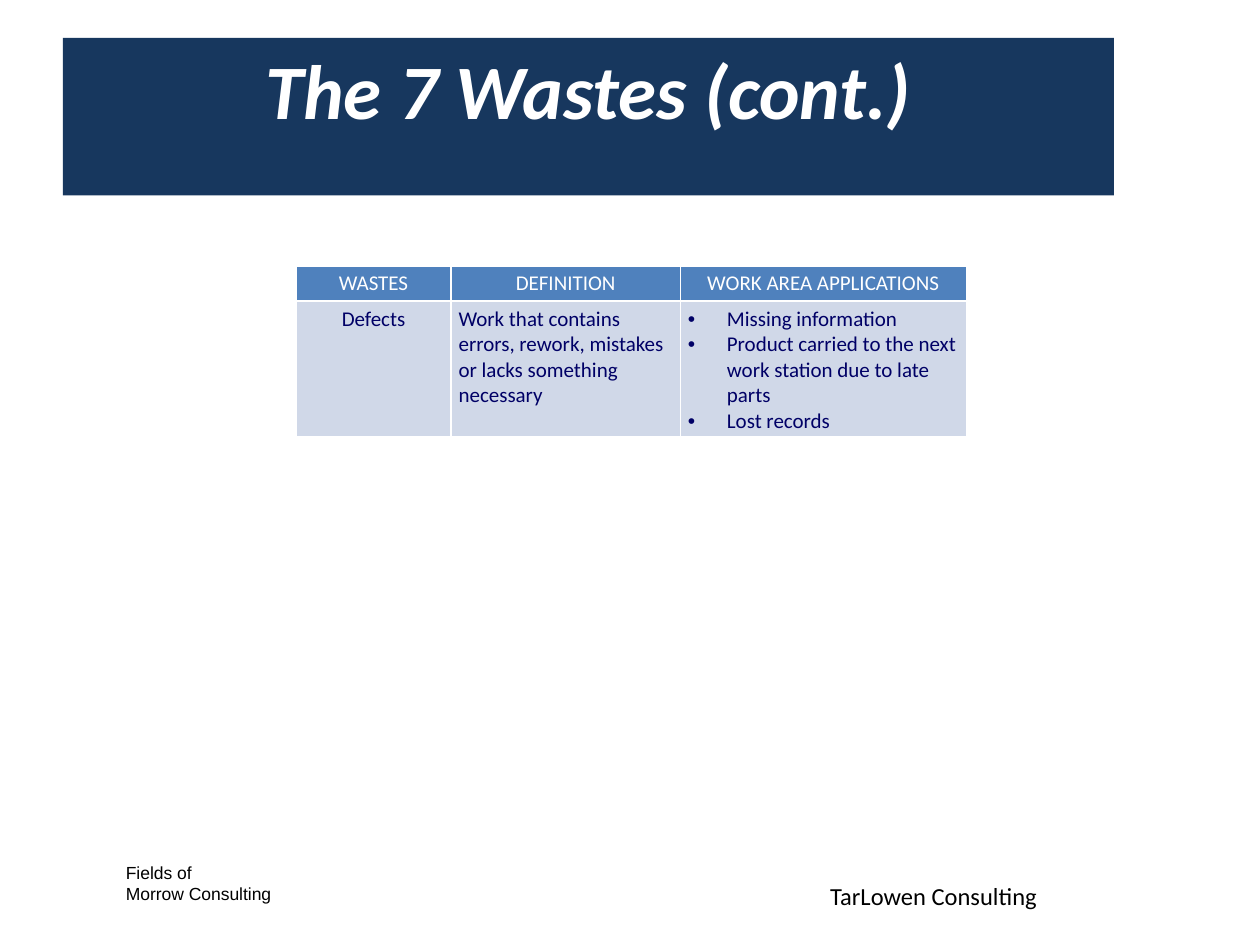
from lxml import etree
from pptx import Presentation
from pptx.dml.color import RGBColor
from pptx.enum import shapes, text
from pptx.oxml import ns
from pptx.util import Inches, Pt

WHITE = RGBColor(0xFF, 0xFF, 0xFF)
BLACK = RGBColor(0x00, 0x00, 0x00)
NAVY = RGBColor(0x17, 0x37, 0x5E)
HEADER_BLUE = RGBColor(0x4F, 0x81, 0xBD)
BODY_BLUE = RGBColor(0xD0, 0xD8, 0xE8)
INK = RGBColor(0x00, 0x00, 0x66)

LEFT, CENTER = text.PP_ALIGN.LEFT, text.PP_ALIGN.CENTER
COLUMN_WIDTHS = [1.23, 1.82, 2.27]
ROW_HEIGHTS = [0.27, 1.07]
HEADINGS = ["WASTES", "DEFINITION", "WORK AREA APPLICATIONS"]
DEFINITION = "Work that contains errors, rework, mistakes or lacks something necessary"
APPLICATIONS = [
    "Missing information",
    "Product carried to the next work station due to late parts",
    "Lost records",
]


def add_bullet(paragraph, indent=0.31):
    properties = paragraph._p.get_or_add_pPr()
    properties.set("marL", str(Inches(indent)))
    properties.set("indent", str(-Inches(indent)))
    etree.SubElement(properties, ns.qn("a:buFont"), typeface="Arial")
    etree.SubElement(properties, ns.qn("a:buChar"), char="•")


def write(frame, lines, size=12, color=BLACK, font="Calibri", align=LEFT,
          bold=False, italic=False, bullets=False):
    """Fill a text frame with one paragraph for each line."""
    frame.word_wrap = True
    for index, line in enumerate(lines):
        paragraph = frame.add_paragraph() if index else frame.paragraphs[0]
        paragraph.alignment = align
        if bullets:
            add_bullet(paragraph)
        run = paragraph.add_run()
        run.text = line
        run.font.name = font
        run.font.size = Pt(size)
        run.font.bold = bold
        run.font.italic = italic
        run.font.color.rgb = color


def set_margins(target, side, end):
    target.margin_left = target.margin_right = Inches(side)
    target.margin_top = target.margin_bottom = Inches(end)


def add_title(slide, title):
    banner = slide.shapes.add_shape(
        shapes.MSO_SHAPE.RECTANGLE,
        Inches(0.5), Inches(0.3), Inches(8.34), Inches(1.25))
    banner.shadow.inherit = False
    banner.fill.solid()
    banner.fill.fore_color.rgb = NAVY
    banner.line.fill.background()
    frame = banner.text_frame
    frame.vertical_anchor = text.MSO_ANCHOR.TOP
    set_margins(frame, 0.07, 0.04)
    write(frame, [title], size=44, color=WHITE, align=CENTER, bold=True, italic=True)


def add_label(slide, left, top, width, height, lines, **style):
    box = slide.shapes.add_textbox(
        Inches(left), Inches(top), Inches(width), Inches(height))
    write(box.text_frame, lines, **style)


def set_borders(cell, color, points=1):
    properties = cell._tc.get_or_add_tcPr()
    for side in ("lnL", "lnR", "lnT", "lnB"):
        line = etree.SubElement(properties, ns.qn(f"a:{side}"), w=str(Pt(points)))
        fill = etree.SubElement(line, ns.qn("a:solidFill"))
        etree.SubElement(fill, ns.qn("a:srgbClr"), val=str(color))


def fill_cell(cell, lines, fill, **style):
    set_margins(cell, 0.06, 0.04)
    set_borders(cell, WHITE)
    cell.fill.solid()
    cell.fill.fore_color.rgb = fill
    write(cell.text_frame, lines, **style)


def add_wastes_table(slide):
    table = slide.shapes.add_table(
        len(ROW_HEIGHTS), len(COLUMN_WIDTHS), Inches(2.35), Inches(2.11),
        Inches(sum(COLUMN_WIDTHS)), Inches(sum(ROW_HEIGHTS))).table
    for column, width in zip(table.columns, COLUMN_WIDTHS):
        column.width = Inches(width)
    for row, height in zip(table.rows, ROW_HEIGHTS):
        row.height = Inches(height)
    for index, heading in enumerate(HEADINGS):
        fill_cell(table.cell(0, index), [heading], HEADER_BLUE,
                  color=WHITE, align=CENTER)
    fill_cell(table.cell(1, 0), ["Defects"], BODY_BLUE, color=INK, align=CENTER)
    fill_cell(table.cell(1, 1), [DEFINITION], BODY_BLUE, color=INK)
    fill_cell(table.cell(1, 2), APPLICATIONS, BODY_BLUE, color=INK, bullets=True)


def main():
    presentation = Presentation()
    presentation.slide_width = Inches(10)
    presentation.slide_height = Inches(7.5)
    slide = presentation.slides.add_slide(presentation.slide_layouts[6])
    add_label(slide, 0.9, 6.79, 2.35, 0.44, ["Fields of", "Morrow Consulting"],
              size=10, font="Arial")
    add_label(slide, 6.49, 6.94, 2.92, 0.23, ["TarLowen Consulting"], size=14)
    add_title(slide, "The 7 Wastes (cont.)")
    add_wastes_table(slide)
    presentation.save("out.pptx")


if __name__ == "__main__":
    main()
